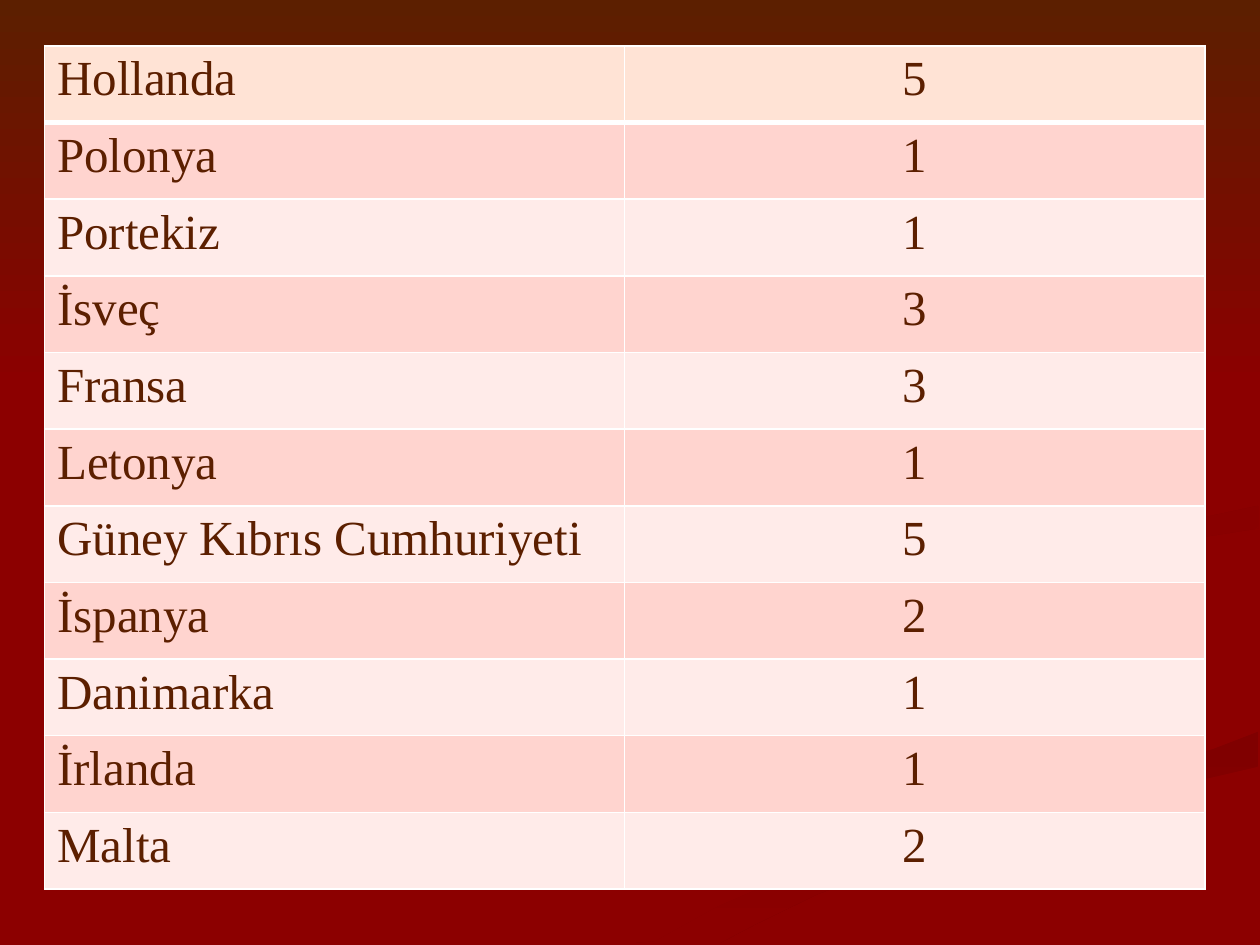
from lxml import etree
from pptx import Presentation
from pptx.dml.color import RGBColor
from pptx.enum.shapes import MSO_SHAPE
from pptx.enum.text import PP_ALIGN
from pptx.oxml.ns import qn
from pptx.util import Pt

LEFT, CENTER = PP_ALIGN.LEFT, PP_ALIGN.CENTER
RECT = MSO_SHAPE.RECTANGLE
FONT = "Times New Roman"
WIDE, HIGH = 720, 540

HUES = {
    "red": "8C0000",
    "dusk": "860000",
    "wine": "800000",
    "rust": "840000",
    "brown": "5C1F00",
    "white": "FFFFFF",
    "head": "FFE3D5",
    "dark": "FFD4CF",
    "light": "FFEBE9",
}

ROWS = [
    ("Hollanda", 5),
    ("Polonya", 1),
    ("Portekiz", 1),
    ("İsveç", 3),
    ("Fransa", 3),
    ("Letonya", 1),
    ("Güney Kıbrıs Cumhuriyeti", 5),
    ("İspanya", 2),
    ("Danimarka", 1),
    ("İrlanda", 1),
    ("Malta", 2),
]

SEAM = [(374, 538), (410, 518), (454, 499), (501, 482), (574, 459),
        (650, 439), (693, 428), (719, 418)]
CURL = [(562, 398), (526, 384), (491, 374), (451, 361), (423, 346),
        (414, 330), (410, 340), (422, 351), (454, 364), (502, 378),
        (541, 391), (562, 400), (566, 408), (557, 420), (532, 431),
        (492, 441), (417, 460), (359, 476), (300, 497), (243, 523),
        (216, 539), (260, 539), (310, 514), (359, 495), (406, 479),
        (469, 461), (533, 445), (562, 436), (572, 426), (576, 418),
        (572, 408)]
SHADE = [(362, 539), (411, 539), (432, 528), (467, 511), (520, 491),
         (591, 469), (650, 454), (719, 438)] + SEAM[::-1]
BAND = [(522, 334), (528, 348), (558, 362), (598, 374), (640, 385),
        (670, 398), (679, 410), (674, 423), (649, 434), (607, 445),
        (535, 463), (477, 481), (413, 506), (343, 539)] + SEAM + [
        (719, 387), (678, 379), (624, 366), (588, 354), (566, 341),
        (563, 331), (576, 318), (612, 307), (672, 299), (719, 289),
        (719, 279), (678, 287), (598, 299), (554, 307), (527, 321)]
FOLD = [(562, 331), (563, 338), (570, 344), (595, 357), (585, 351),
        (580, 343), (580, 337), (596, 326), (632, 316), (674, 309),
        (719, 302), (719, 289), (672, 299), (612, 307), (576, 318)]


def tint(name):
    return RGBColor.from_string(HUES[name])


def write(frame, text, size=28, hue="brown", align=LEFT):
    par = frame.paragraphs[0]
    par.alignment = align
    run = par.add_run()
    run.text = text
    run.font.name = FONT
    run.font.size = Pt(size)
    run.font.color.rgb = tint(hue)


class Deck:
    """Holds the style and the current slide."""

    def __init__(self):
        self.file = Presentation()
        self.file.slide_width = Pt(WIDE)
        self.file.slide_height = Pt(HIGH)
        self.slide = self.file.slides.add_slide(self.file.slide_layouts[6])
        fill = self.slide.background.fill
        fill.solid()
        fill.fore_color.rgb = tint("red")

    def paint(self, shape, hues, turn):
        shape.shadow.inherit = False
        shape.line.fill.background()
        if len(hues) == 1:
            shape.fill.solid()
            shape.fill.fore_color.rgb = tint(hues[0])
            return
        shape.fill.gradient()
        shape.fill.gradient_angle = -turn % 360
        for stop, hue in zip(shape.fill.gradient_stops, hues):
            stop.color.rgb = tint(hue)

    def ribbon(self, points, *hues, turn=0):
        pen = self.slide.shapes.build_freeform(*points[0], scale=Pt(1))
        pen.add_line_segments(points[1:], close=True)
        self.paint(pen.convert_to_shape(), hues, turn)

    def panel(self, x, y, w, h, *hues, turn=0):
        shape = self.slide.shapes.add_shape(RECT, Pt(x), Pt(y), Pt(w), Pt(h))
        self.paint(shape, hues, turn)

    def border(self, cell, **sides):
        props = cell._tc.get_or_add_tcPr()
        for side, width in sides.items():
            line = etree.SubElement(props, qn(f"a:ln{side}"), w=str(Pt(width)))
            fill = etree.SubElement(line, qn("a:solidFill"))
            etree.SubElement(fill, qn("a:srgbClr"), val=HUES["white"])

    def table(self, rows, x, y, w, h):
        box = self.slide.shapes.add_table(
            len(rows), len(rows[0]), Pt(x), Pt(y), Pt(w), Pt(h))
        grid = box.table
        for row, items in enumerate(rows):
            grid.rows[row].height = Pt(h / len(rows))
            hue = "head" if row == 0 else ("light", "dark")[row % 2]
            for col, item in enumerate(items):
                cell = grid.cell(row, col)
                self.border(cell, L=1, R=1, T=3 if row == 1 else 1,
                            B=3 if row == 0 else 1)
                cell.fill.solid()
                cell.fill.fore_color.rgb = tint(hue)
                write(cell.text_frame, str(item), align=CENTER if col else LEFT)


def main():
    deck = Deck()
    deck.ribbon(CURL, "red", "dusk")
    deck.ribbon(SHADE, "wine", "red", turn=90)
    deck.ribbon(BAND, "red")
    deck.ribbon(FOLD, "rust", "red", turn=45)
    deck.panel(0, 0, WIDE, 222, "brown", "red", turn=90)
    deck.table(ROWS, 25.5, 26.25, 663, 482)
    deck.file.save("out.pptx")


if __name__ == "__main__":
    main()
